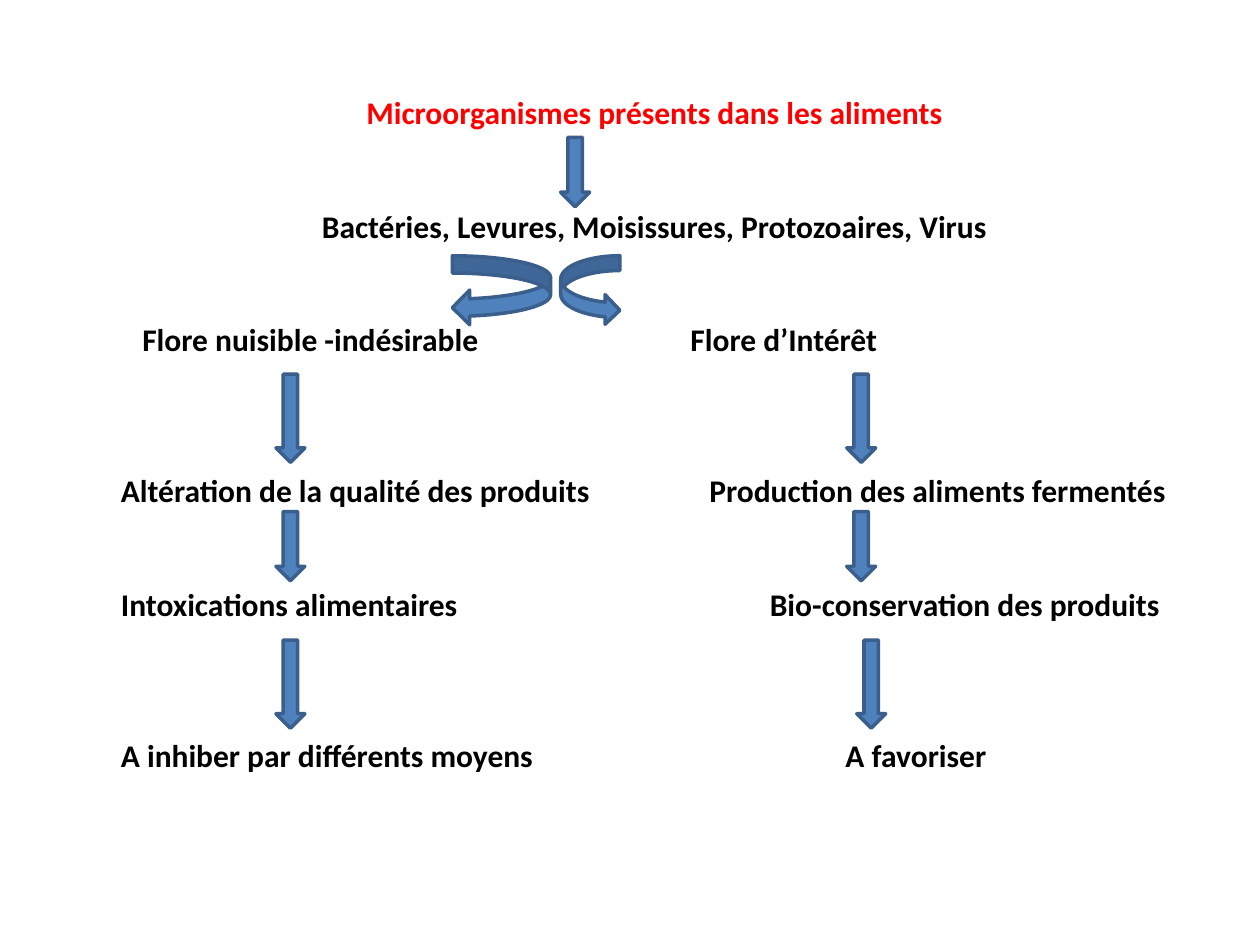
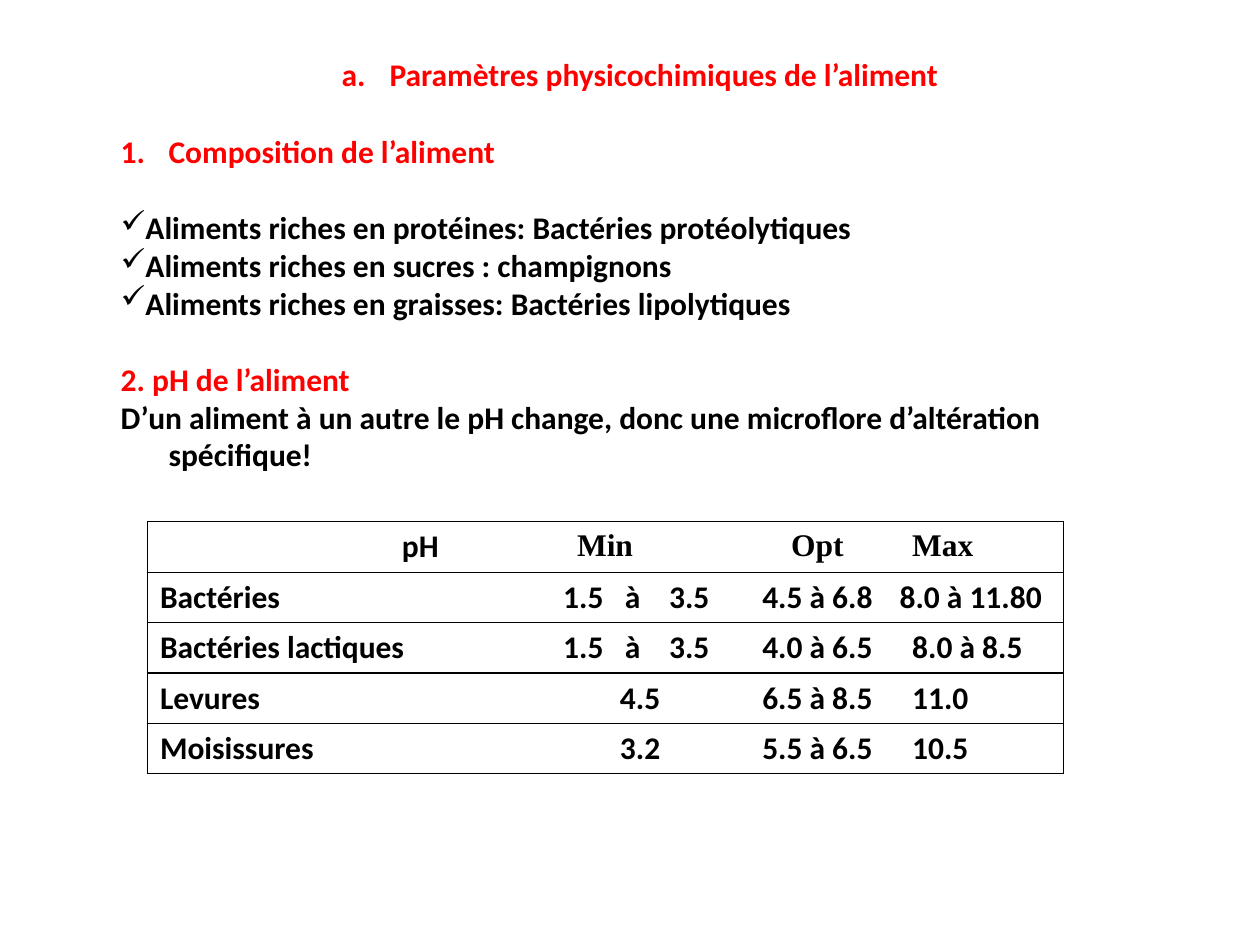
"""Build two slides on food microorganisms: a flow diagram and a pH table."""
import pptx
import pptx.dml.color
import pptx.enum.shapes
import pptx.enum.text
import pptx.oxml
import pptx.oxml.ns
import pptx.util
from dataclasses import dataclass

Inches = pptx.util.Inches
Pt = pptx.util.Pt
SHAPE = pptx.enum.shapes.MSO_SHAPE
ALIGN = pptx.enum.text.PP_ALIGN


@dataclass(frozen=True)
class Theme:
    red: str = "FF0000"
    black: str = "000000"
    white: str = "FFFFFF"
    arrow: str = "4F81BD"
    arrow_line: str = "3A5F8C"
    body: str = "Calibri"
    header: str = "Times New Roman"
    size: int = 18
    line_gap: int = 22
    rule: float = 0.75
    outline: float = 2


T = Theme()

TOP, LINE = 0.44, 0.3
CENTRED = [
    (1, "Microorganismes présents dans les aliments", T.red),
    (4, "Bactéries, Levures, Moisissures, Protozoaires, Virus", T.black),
]
BRANCHES = [
    (7, (1.13, "Flore nuisible -indésirable"), (5.48, "Flore d’Intérêt")),
    (11, (0.96, "Altération de la qualité des produits"), (5.63, "Production des aliments fermentés")),
    (14, (0.96, "Intoxications alimentaires"), (6.11, "Bio-conservation des produits")),
    (18, (0.96, "A inhiber par différents moyens"), (6.71, "A favoriser")),
]
BRANCH_RIGHT = (5.4, 9.8)
DOWN_W, SHORT, LONG = 0.23, 0.55, 0.7
FORK = [(SHAPE.CURVED_LEFT_ARROW, 3.59, 0.78), (SHAPE.CURVED_RIGHT_ARROW, 4.45, 0.47)]
FORK_TOP = 2.03
STEPS = [(2.97, LONG, (2.19, 6.72)), (4.06, SHORT, (2.19, 6.72)), (5.08, LONG, (2.19, 6.8))]

LETTER = ("buAutoNum", "type", "alphaLcPeriod")
NUMBER = ("buAutoNum", "type", "arabicPeriod")
CHECK = ("buChar", "char", "✓")
PARAGRAPHS = [
    ("Paramètres physicochimiques de l’aliment", T.red, LETTER, 0.38, 0),
    ("Composition de l’aliment", T.red, NUMBER, 0.38, 1),
    ("Aliments riches en protéines: Bactéries protéolytiques", T.black, CHECK, 0, 1),
    ("Aliments riches en sucres : champignons", T.black, CHECK, 0, 0),
    ("Aliments riches en graisses: Bactéries lipolytiques", T.black, CHECK, 0, 0),
    ("2. pH de l’aliment", T.red, None, 0.38, 1),
    ("D’un aliment à un autre le pH change, donc une microflore d’altération spécifique!",
     T.black, None, 0.38, 0),
]

COLS = (3.05, 1.72, 1.09, 1.41)
ROW_H = 0.4
RANGE_TABS = (0.49, 0.84)
TABLE = [
    [("pH", 2.02), ("Min", 0.36), ("Opt", 0.34), ("Max", 0.21)],
    [("Bactéries", 0.1), ("1.5\tà\t3.5", 0.25), ("4.5 à 6.8", 0.11), ("8.0 à 11.80", 0.11)],
    [("Bactéries lactiques", 0.1), ("1.5\tà\t3.5", 0.25), ("4.0 à 6.5", 0.11), ("8.0 à 8.5", 0.21)],
    [("Levures", 0.1), ("4.5", 0.7), ("6.5 à 8.5", 0.11), ("11.0", 0.21)],
    [("Moisissures", 0.1), ("3.2", 0.7), ("5.5 à 6.5", 0.11), ("10.5", 0.21)],
]


def rgb(value):
    return pptx.dml.color.RGBColor.from_string(value)


def add_xml(parent, tag, **attrs):
    el = pptx.oxml.parse_xml(f"<a:{tag} {pptx.oxml.ns.nsdecls('a')}/>")
    for key, value in attrs.items():
        el.set(key, str(value))
    parent.append(el)
    return el


def style(p, color=T.black, font=T.body):
    for r in p.runs:
        r.font.name, r.font.size, r.font.bold = font, Pt(T.size), True
        r.font.color.rgb = rgb(color)


def text_box(s, x, y, w, h, margin=0):
    tf = s.shapes.add_textbox(Inches(x), Inches(y), Inches(w), Inches(h)).text_frame
    tf.word_wrap = True
    tf.margin_left = tf.margin_right = Inches(margin)
    tf.margin_top = tf.margin_bottom = Inches(margin / 2)
    return tf


def add_label(s, row, text, x, w, color=T.black, align=ALIGN.LEFT):
    p = text_box(s, x, TOP + row * LINE, w, LINE).paragraphs[0]
    p.text, p.alignment = text, align
    style(p, color)


def add_arrow(s, kind, x, y, w, h):
    sp = s.shapes.add_shape(kind, Inches(x), Inches(y), Inches(w), Inches(h))
    sp.shadow.inherit = False
    sp.fill.solid()
    sp.fill.fore_color.rgb = rgb(T.arrow)
    sp.line.color.rgb = rgb(T.arrow_line)
    sp.line.width = Pt(T.outline)


def build_flow(s):
    for row, text, color in CENTRED:
        add_label(s, row, text, 0.86, 8.67, color, ALIGN.CENTER)
    for row, *labels in BRANCHES:
        for (x, text), right in zip(labels, BRANCH_RIGHT):
            add_label(s, row, text, x, right - x)
    add_arrow(s, SHAPE.DOWN_ARROW, 4.45, 1.09, DOWN_W, SHORT)
    for kind, x, w in FORK:
        add_arrow(s, kind, x, FORK_TOP, w, SHORT)
    for y, h, lefts in STEPS:
        for x in lefts:
            add_arrow(s, SHAPE.DOWN_ARROW, x, y, DOWN_W, h)


def build_outline(s):
    tf = text_box(s, 0.86, 0.39, 8.44, 3.43, 0.1)
    for i, (text, color, bullet, hang, gaps) in enumerate(PARAGRAPHS):
        p = tf.add_paragraph() if i else tf.paragraphs[0]
        p.text = text
        pPr = p._p.get_or_add_pPr()
        pPr.set("marL", str(Inches(hang)))
        pPr.set("indent", str(-Inches(hang)))
        if bullet:
            tag, key, value = bullet
            add_xml(pPr, tag, **{key: value})
        if gaps:
            p.space_before = Pt(gaps * T.line_gap)
        style(p, color)
    tf.paragraphs[0].alignment = ALIGN.CENTER


def set_borders(cell, first, last):
    tcPr = cell._tc.get_or_add_tcPr()
    for tag, shown in (("lnL", first), ("lnR", last), ("lnT", True), ("lnB", True)):
        ln = add_xml(tcPr, tag, w=Pt(T.rule))
        if shown:
            add_xml(add_xml(ln, "solidFill"), "srgbClr", val=T.black)
        else:
            add_xml(ln, "noFill")


def build_table(s):
    table = s.shapes.add_table(len(TABLE), len(COLS), Inches(1.17), Inches(4.14),
                               Inches(sum(COLS)), Inches(ROW_H * len(TABLE))).table
    table.first_row = table.horz_banding = False
    for col, w in zip(table.columns, COLS):
        col.width = Inches(w)
    for i, row in enumerate(TABLE):
        table.rows[i].height = Inches(ROW_H)
        for j, (text, offset) in enumerate(row):
            cell = table.cell(i, j)
            set_borders(cell, j == 0, j == len(COLS) - 1)
            cell.fill.solid()
            cell.fill.fore_color.rgb = rgb(T.white)
            cell.margin_left, cell.margin_right = Inches(offset), Inches(0.02)
            p = cell.text_frame.paragraphs[0]
            p.text = text
            if "\t" in text:
                tabs = add_xml(p._p.get_or_add_pPr(), "tabLst")
                for pos in RANGE_TABS:
                    add_xml(tabs, "tab", pos=Inches(pos), algn="l")
            style(p, font=T.header if i == 0 and j else T.body)


def main():
    prs = pptx.Presentation()
    prs.slide_width, prs.slide_height = Inches(10), Inches(7.5)
    flow, parameters = [prs.slides.add_slide(prs.slide_layouts[6]) for _ in range(2)]
    build_flow(flow)
    build_outline(parameters)
    build_table(parameters)
    prs.save("out.pptx")


if __name__ == "__main__":
    main()
